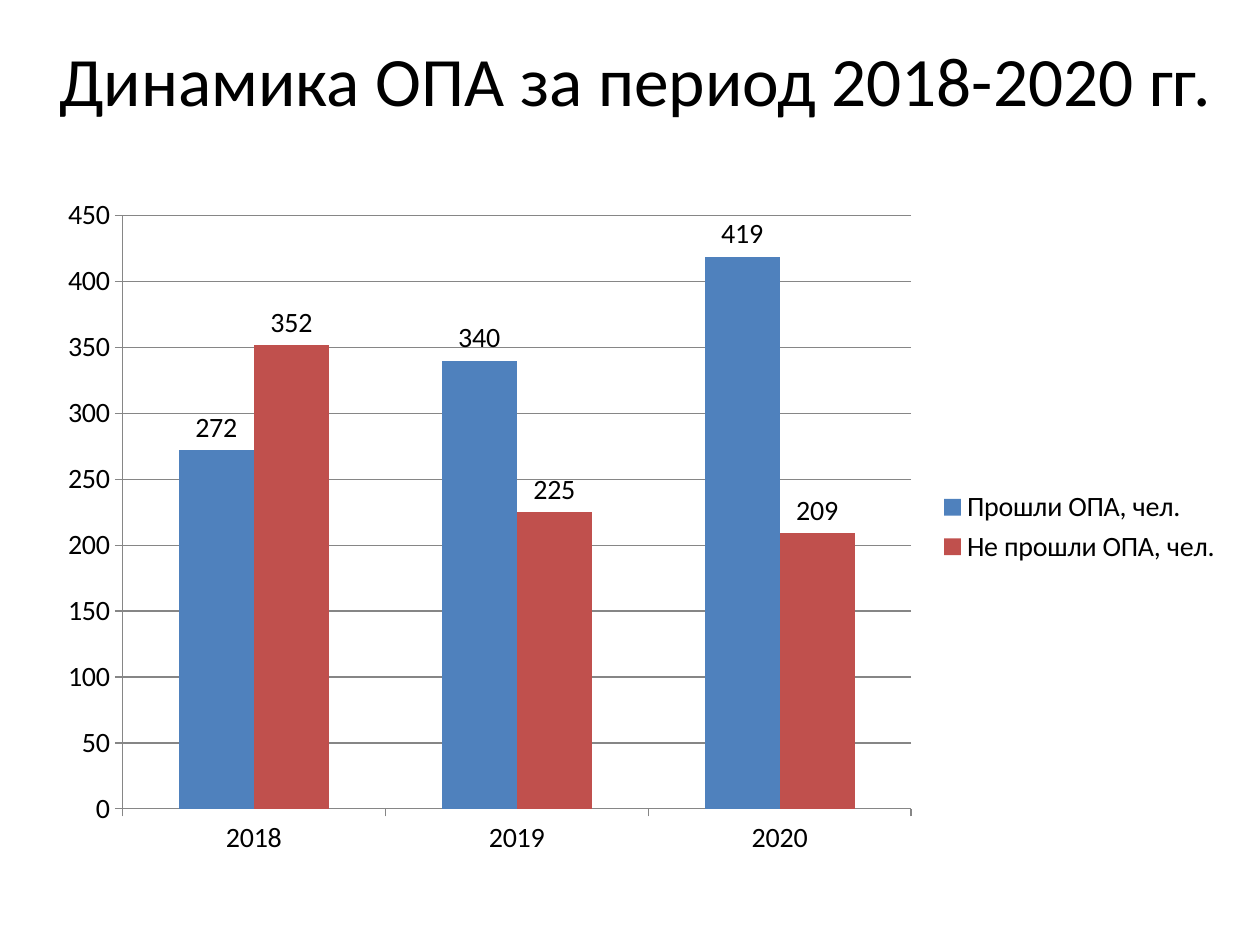
from dataclasses import dataclass

from pptx import Presentation
from pptx.chart.data import CategoryChartData
from pptx.dml.color import RGBColor
from pptx.enum.chart import XL_CHART_TYPE, XL_LABEL_POSITION, XL_LEGEND_POSITION, XL_TICK_MARK
from pptx.enum.text import MSO_ANCHOR, MSO_AUTO_SIZE, PP_ALIGN
from pptx.util import Cm, Pt

COLUMNS = XL_CHART_TYPE.COLUMN_CLUSTERED
ABOVE = XL_LABEL_POSITION.OUTSIDE_END
RIGHT = XL_LEGEND_POSITION.RIGHT
OUTSIDE = XL_TICK_MARK.OUTSIDE
NO_TICK = XL_TICK_MARK.NONE
MIDDLE = MSO_ANCHOR.MIDDLE
NO_FIT = MSO_AUTO_SIZE.NONE
CENTER = PP_ALIGN.CENTER


@dataclass(frozen=True)
class Theme:
    font: str = "Calibri"
    ink: RGBColor = RGBColor(0x00, 0x00, 0x00)
    paper: RGBColor = RGBColor(0xFF, 0xFF, 0xFF)
    grid: RGBColor = RGBColor(0x86, 0x86, 0x86)
    bars: tuple = (RGBColor(0x4F, 0x81, 0xBD), RGBColor(0xC0, 0x50, 0x4D))
    head: Pt = Pt(39.6)
    body: Pt = Pt(16)
    rule: Pt = Pt(0.75)


class Page:
    def __init__(self, deck, theme):
        self.theme = theme
        self.slide = deck.slides.add_slide(deck.slide_layouts[5])
        fill = self.slide.background.fill
        fill.solid()
        fill.fore_color.rgb = theme.paper

    def style(self, font, size):
        font.name = self.theme.font
        font.size = size
        font.color.rgb = self.theme.ink

    def title(self, text, left, top, width, height):
        shape = self.slide.shapes.title
        shape.left, shape.top = left, top
        shape.width, shape.height = width, height
        frame = shape.text_frame
        frame.text = text
        frame.word_wrap = True
        frame.auto_size = NO_FIT
        frame.vertical_anchor = MIDDLE
        line = frame.paragraphs[0]
        line.alignment = CENTER
        self.style(line.runs[0].font, self.theme.head)

    def axis(self, axis):
        axis.major_tick_mark = OUTSIDE
        axis.minor_tick_mark = NO_TICK
        self.rule(axis.format.line)
        self.style(axis.tick_labels.font, self.theme.body)

    def rule(self, line):
        line.color.rgb = self.theme.grid
        line.width = self.theme.rule

    def chart(self, years, rows, left, top, width, height):
        data = CategoryChartData()
        data.categories = years
        for name, counts in rows.items():
            data.add_series(name, counts)
        chart = self.slide.shapes.add_chart(COLUMNS, left, top, width, height, data).chart
        self.style(chart.font, self.theme.body)
        chart.has_title = False
        chart.has_legend = True
        chart.legend.position = RIGHT
        chart.legend.include_in_layout = False
        self.style(chart.legend.font, self.theme.body)
        self.axis(chart.category_axis)
        self.axis(chart.value_axis)
        chart.value_axis.has_major_gridlines = True
        self.rule(chart.value_axis.major_gridlines.format.line)
        plot = chart.plots[0]
        plot.gap_width = 150
        plot.overlap = 0
        plot.vary_by_categories = False
        for series, color in zip(plot.series, self.theme.bars):
            series.format.fill.solid()
            series.format.fill.fore_color.rgb = color
            labels = series.data_labels
            labels.show_value = True
            labels.position = ABOVE
            self.style(labels.font, self.theme.body)


def main():
    deck = Presentation()
    deck.slide_width, deck.slide_height = Cm(25.4), Cm(19.05)
    page = Page(deck, Theme())
    page.title("Динамика ОПА за период 2018-2020 гг.", Cm(0.71), Cm(0), Cm(24.21), Cm(3.18))
    rows = {
        "Прошли ОПА, чел.": (272, 340, 419),
        "Не прошли ОПА, чел.": (352, 225, 209),
    }
    page.chart(("2018", "2019", "2020"), rows, Cm(0.89), Cm(3.73), Cm(24), Cm(13.79))
    deck.save("out.pptx")


if __name__ == "__main__":
    main()
